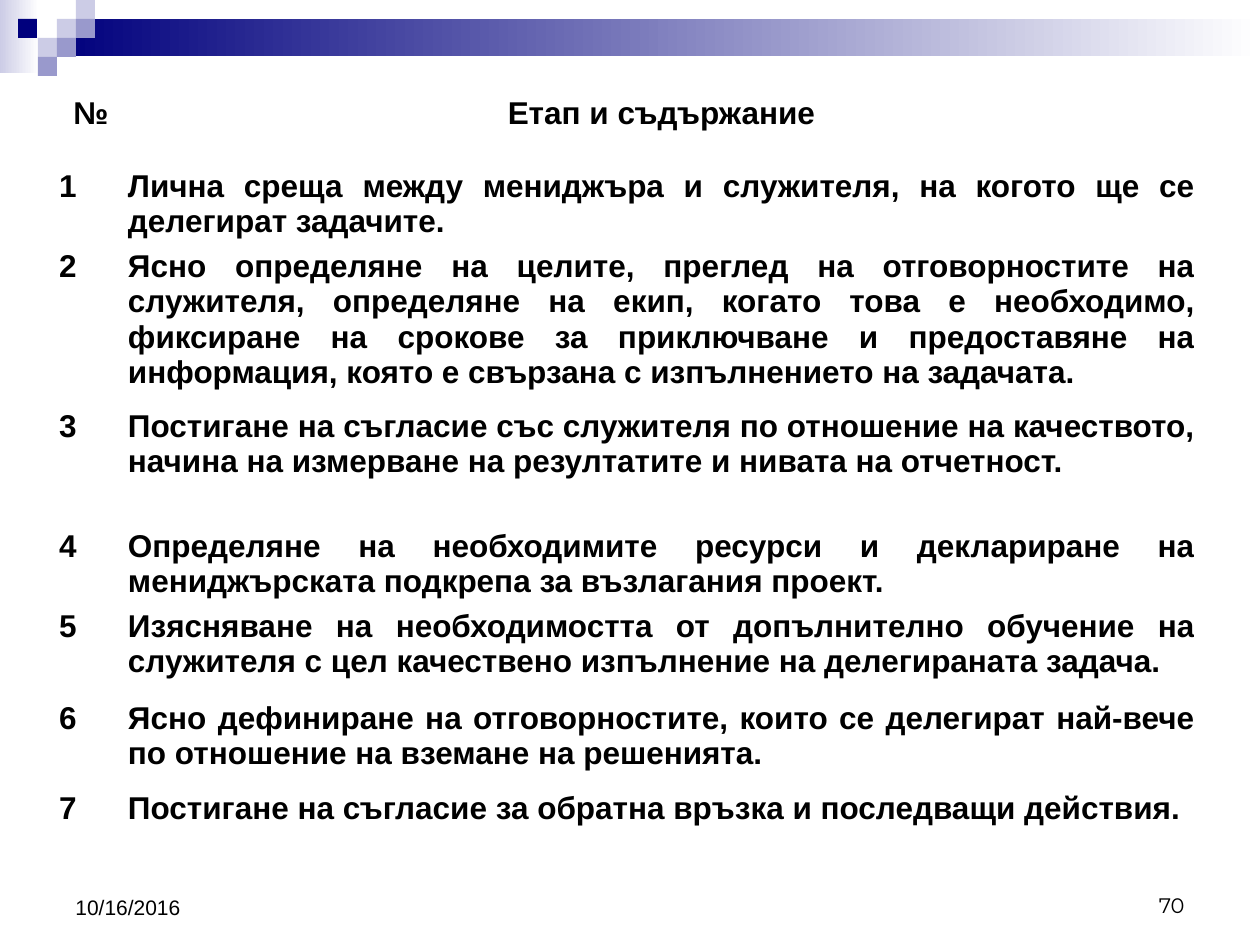
from lxml.etree import SubElement
from pptx import Presentation
from pptx.dml.color import RGBColor
from pptx.enum.shapes import MSO_SHAPE
from pptx.enum.text import MSO_ANCHOR, PP_ALIGN
from pptx.oxml.ns import qn
from pptx.util import Emu, Pt

PX = 914400 // 126
WHITE, BLACK, NAVY = "FFFFFF", "000000", "00007D"
LAVENDER, VIOLET = "CCCCE6", "9999CC"

HEADER = ("№", "Етап и съдържание")
STAGES = [
    (80, "Лична среща между мениджъра и служителя, на когото ще се делегират задачите."),
    (160, "Ясно определяне на целите, преглед на отговорностите на служителя, "
          "определяне на екип, когато това е необходимо, фиксиране на срокове за "
          "приключване и предоставяне на информация, която е свързана с "
          "изпълнението на задачата."),
    (120, "Постигане на съгласие със служителя по отношение на качеството, начина на "
          "измерване на резултатите и нивата на отчетност."),
    (80, "Определяне на необходимите ресурси и деклариране на мениджърската подкрепа "
         "за възлагания проект."),
    (92, "Изясняване на необходимостта от допълнително обучение на служителя с цел "
         "качествено изпълнение на делегираната задача."),
    (90, "Ясно дефиниране на отговорностите, които се делегират най-вече по отношение "
         "на вземане на решенията."),
    (80, "Постигане на съгласие за обратна връзка и последващи действия."),
]
HEADER_HEIGHT = 73
COLUMN_WIDTHS = (69, 1072)
TABLE_LEFT, TABLE_TOP = 54, 96
BANDS = [((0, 0, 39, 73), LAVENDER), ((57, 19, 1203, 37), NAVY)]
TILE = 19
TILES = [
    (57, 19, LAVENDER), (76, 0, LAVENDER), (76, 19, VIOLET), (38, 38, LAVENDER),
    (18, 19, NAVY), (57, 38, VIOLET), (38, 57, VIOLET),
]
FOOTERS = [
    ("70", (903, 861, 294, 63), "Montserrat", PP_ALIGN.RIGHT),
    ("10/16/2016", (63, 861, 294, 65), "Arial", PP_ALIGN.LEFT),
]


def px(*lengths):
    return [Emu(length * PX) for length in lengths]


def rgb(value):
    return RGBColor.from_string(value)


def set_all(target, values):
    for name, value in values.items():
        setattr(target, name, value)


def write(frame, text, font, size, align, bold=False):
    paragraph = frame.paragraphs[0]
    paragraph.alignment = align
    run = paragraph.add_run()
    run.text = text
    set_all(run.font, {"name": font, "size": Pt(size), "bold": bold})
    run.font.color.rgb = rgb(BLACK)
    return paragraph


def add_block(slide, box, color, fade=False):
    block = slide.shapes.add_shape(MSO_SHAPE.RECTANGLE, *px(*box))
    block.shadow.inherit = False
    block.line.fill.background()
    if fade:
        block.fill.gradient()
        block.fill.gradient_angle = 0
        for stop, shade in zip(block.fill.gradient_stops, (color, WHITE)):
            stop.color.rgb = rgb(shade)
    else:
        block.fill.solid()
        block.fill.fore_color.rgb = rgb(color)


def add_borders(cell, widths):
    properties = cell._tc.get_or_add_tcPr()
    for side, width in widths.items():
        line = SubElement(properties, qn(f"a:ln{side}"), w=str(Pt(width)))
        fill = SubElement(line, qn("a:solidFill"))
        SubElement(fill, qn("a:srgbClr"), val=WHITE)


def add_stages(slide):
    rows = [(HEADER_HEIGHT, HEADER)]
    rows += [(height, (str(number), text))
             for number, (height, text) in enumerate(STAGES, 1)]
    heights = [height for height, _ in rows]
    table = slide.shapes.add_table(
        len(rows), len(COLUMN_WIDTHS),
        *px(TABLE_LEFT, TABLE_TOP, sum(COLUMN_WIDTHS), sum(heights))).table
    for column, width in zip(table.columns, px(*COLUMN_WIDTHS)):
        column.width = width
    last = len(rows) - 1
    for index, (height, texts) in enumerate(rows):
        table.rows[index].height = px(height)[0]
        align = PP_ALIGN.CENTER if index == 0 else PP_ALIGN.JUSTIFY
        borders = {"L": 1, "R": 1, "T": 3 if index in (1, last) else 1,
                   "B": 3 if index in (0, last - 1) else 1}
        for cell, text in zip(table.rows[index].cells, texts):
            set_all(cell, {"margin_left": 0, "margin_right": 0,
                           "margin_top": 0, "margin_bottom": 0})
            add_borders(cell, borders)
            cell.fill.solid()
            cell.fill.fore_color.rgb = rgb(WHITE)
            paragraph = write(cell.text_frame, text, "Arial", 18, align, True)
            set_all(paragraph, {"space_before": Pt(2), "space_after": Pt(2)})
            paragraph._p.get_or_add_pPr().set("marL", str(5 * PX))


def add_footer(slide, text, box, font, align):
    frame = slide.shapes.add_textbox(*px(*box)).text_frame
    set_all(frame, {"word_wrap": True, "vertical_anchor": MSO_ANCHOR.BOTTOM})
    write(frame, text, font, 12, align)


def main():
    deck = Presentation()
    deck.slide_width, deck.slide_height = px(1260, 945)
    slide = deck.slides.add_slide(deck.slide_layouts[6])
    for box, color in BANDS:
        add_block(slide, box, color, fade=True)
    for left, top, color in TILES:
        add_block(slide, (left, top, TILE, TILE), color)
    for footer in FOOTERS:
        add_footer(slide, *footer)
    add_stages(slide)
    deck.save("out.pptx")


if __name__ == "__main__":
    main()
